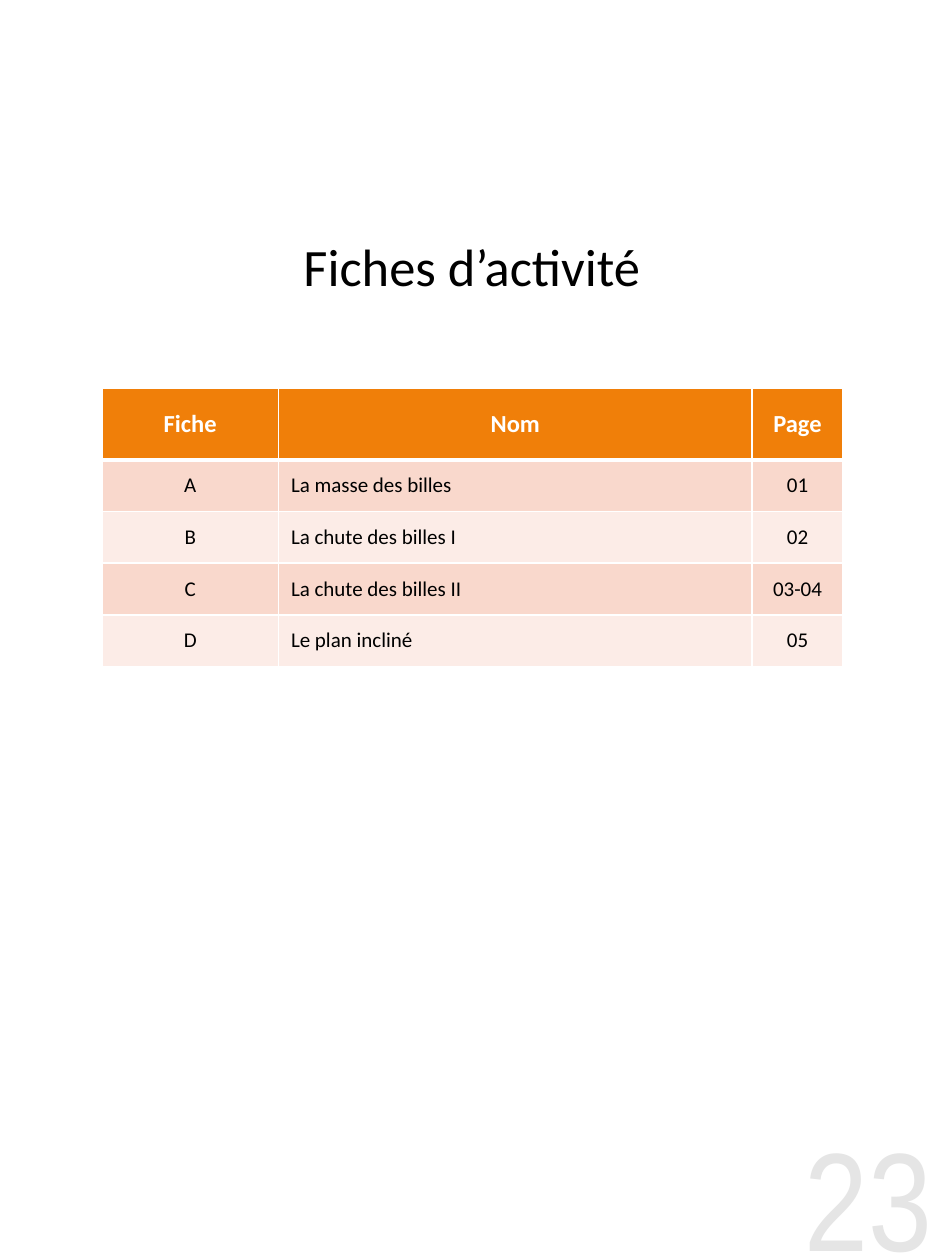
from lxml import etree
from pptx import Presentation
from pptx.dml.color import RGBColor
from pptx.enum import text
from pptx.oxml import ns
from pptx.util import Inches, Pt

ORANGE = RGBColor(0xF0, 0x7F, 0x09)
ROSE = RGBColor(0xF9, 0xD8, 0xCC)
PALE = RGBColor(0xFC, 0xEC, 0xE7)
GREY = RGBColor(0xE5, 0xE5, 0xE5)
BLACK = RGBColor(0, 0, 0)
WHITE = RGBColor(255, 255, 255)
LEFT, MID, RIGHT = text.PP_ALIGN.LEFT, text.PP_ALIGN.CENTER, text.PP_ALIGN.RIGHT

COLS = (1.4, 3.76, 0.72)
ROWS = (0.57, 0.41, 0.41, 0.41, 0.41)
DATA = (
    ("Fiche", "Nom", "Page"),
    ("A", "La masse des billes", "01"),
    ("B", "La chute des billes I", "02"),
    ("C", "La chute des billes II", "03-04"),
    ("D", "Le plan incliné", "05"),
)


def write(frame, words, size, color, align, bold=False, font="Calibri"):
    """Write one styled run in the first paragraph of a frame."""
    para = frame.paragraphs[0]
    para.alignment = align
    run = para.add_run()
    run.text = words
    run.font.name, run.font.size, run.font.bold = font, Pt(size), bold
    run.font.color.rgb = color


def edge(cell, side, width):
    """Draw a white border on one side of a cell."""
    props = cell._tc.get_or_add_tcPr()
    line = etree.SubElement(props, ns.qn(f"a:ln{side}"), w=str(Pt(width)))
    fill = etree.SubElement(line, ns.qn("a:solidFill"))
    etree.SubElement(fill, ns.qn("a:srgbClr"), val=str(WHITE))


def add_title(slide, left, top, width, height):
    """Place the centred title in its box."""
    frame = slide.shapes.add_textbox(left, top, width, height).text_frame
    frame.word_wrap = True
    frame.vertical_anchor = text.MSO_ANCHOR.MIDDLE
    write(frame, "Fiches d’activité", 30, BLACK, MID)


def add_index(slide, left, top, width, height):
    """Place the table of activity sheets in its box."""
    table = slide.shapes.add_table(
        len(ROWS), len(COLS), left, top, width, height).table
    for col, size in zip(table.columns, COLS):
        col.width = Inches(size)
    for row, size in zip(table.rows, ROWS):
        row.height = Inches(size)
    for r, line in enumerate(DATA):
        head = r == 0
        for c, words in enumerate(line):
            cell = table.cell(r, c)
            cell.vertical_anchor = text.MSO_ANCHOR.MIDDLE
            for side in "LRTB":
                thick = (r, side) in ((0, "B"), (1, "T"))
                edge(cell, side, 3 if thick else 1)
            cell.fill.solid()
            cell.fill.fore_color.rgb = ORANGE if head else ROSE if r % 2 else PALE
            write(cell.text_frame, words, 14 if head else 12,
                  WHITE if head else BLACK,
                  LEFT if c == 1 and not head else MID, head)


def add_folio(slide, left, top, width, height):
    """Place the large page number in its box."""
    frame = slide.shapes.add_textbox(left, top, width, height).text_frame
    frame.word_wrap = True
    frame.margin_left = frame.margin_right = 0
    frame.margin_top = frame.margin_bottom = 0
    write(frame, "23", 80, GREY, RIGHT, font="Arial Narrow")


def main():
    """Build the slide and save it."""
    deck = Presentation()
    deck.slide_width, deck.slide_height = Inches(7.5), Inches(10)
    slide = deck.slides.add_slide(deck.slide_layouts[6])
    add_title(slide, Inches(0), Inches(1.63), Inches(7.49), Inches(0.95))
    add_index(slide, Inches(0.81), Inches(3.08),
              Inches(sum(COLS)), Inches(sum(ROWS)))
    add_folio(slide, Inches(5.9), Inches(8.82), Inches(1.5), Inches(1.18))
    deck.save("out.pptx")


if __name__ == "__main__":
    main()
